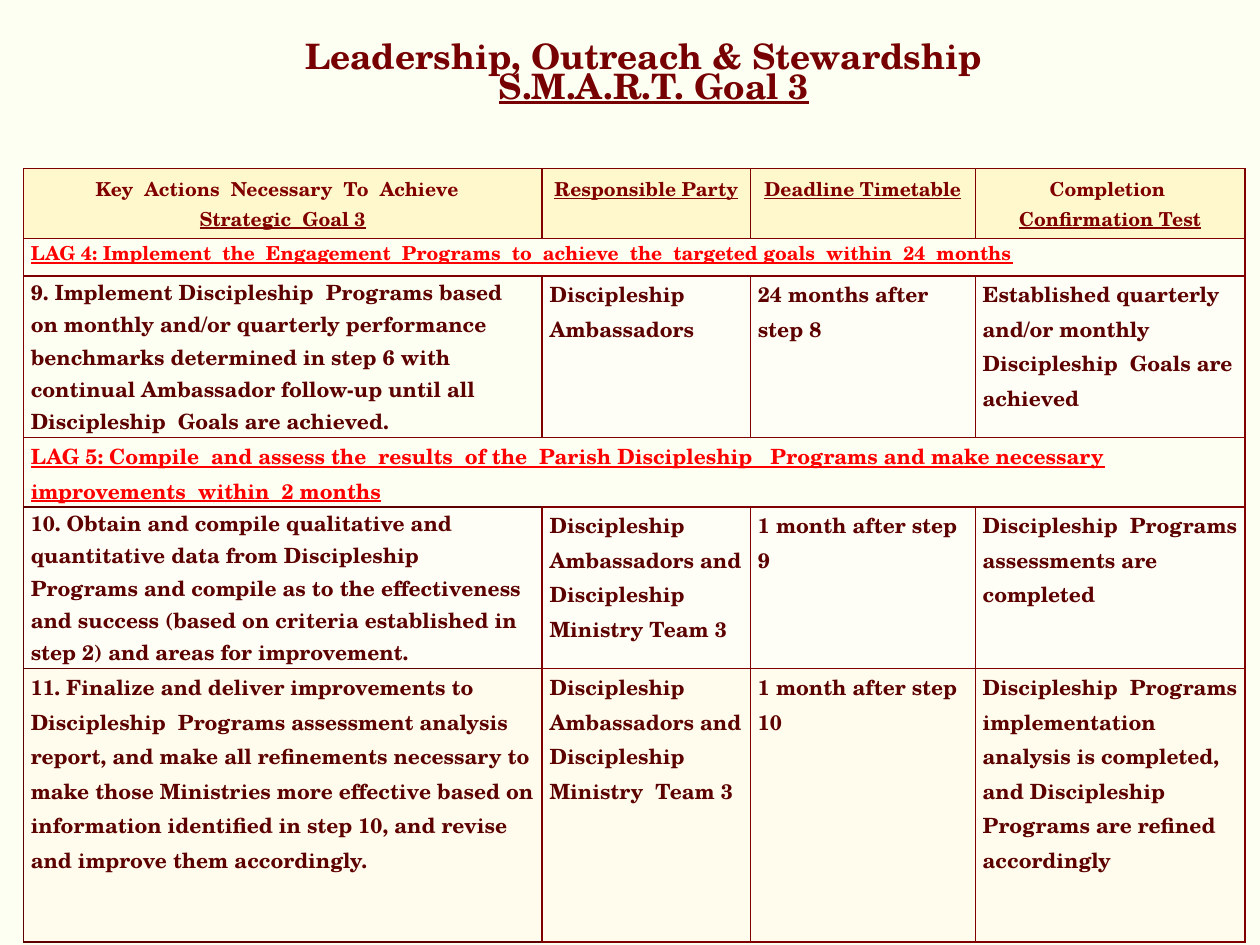
from lxml import etree
from pptx import Presentation
from pptx.dml.color import RGBColor
from pptx.enum.text import MSO_ANCHOR, MSO_AUTO_SIZE, PP_ALIGN
from pptx.oxml.ns import qn
from pptx.util import Cm, Pt

CENTER, LEFT = PP_ALIGN.CENTER, PP_ALIGN.LEFT
MIDDLE, TOP = MSO_ANCHOR.MIDDLE, MSO_ANCHOR.TOP
FONT = "TeX Gyre Schola"
MAROON, DARK, RED = "800000", "5D0100", "FF0000"
HEADER_FILL, PALE, CREAM = "FFF8CD", "FFFEF6", "FFFCED"

# Content: a cell is a list of lines; a row with one cell spans the table
TITLE = ["Leadership, Outreach & Stewardship", "S.M.A.R.T. Goal 3"]
HEADER = [
    ["Key  Actions  Necessary  To  Achieve  ", "Strategic  Goal 3"],
    ["Responsible Party"],
    ["Deadline Timetable"],
    ["Completion ", "Confirmation Test"],
]
LAG_4 = [["LAG 4: Implement  the  Engagement  Programs  to  achieve  the  targeted goals  within  24  months"]]
STEP_9 = [
    ["9. Implement Discipleship  Programs based on monthly and/or quarterly performance "
     "benchmarks determined in step 6 with continual Ambassador follow-up until all "
     "Discipleship  Goals are achieved."],
    ["Discipleship  Ambassadors"],
    ["24 months after step 8"],
    ["Established quarterly and/or monthly Discipleship  Goals are achieved"],
]
LAG_5 = [["LAG 5: Compile  and assess the  results  of the  Parish Discipleship   Programs "
          "and make necessary improvements  within  2 months"]]
STEP_10 = [
    ["10. Obtain and compile qualitative and quantitative data from Discipleship  Programs "
     "and compile as to the effectiveness and success (based on criteria established in "
     "step 2) and areas for improvement."],
    ["Discipleship  Ambassadors and Discipleship  Ministry Team 3"],
    ["1 month after step 9"],
    ["Discipleship  Programs", "assessments are completed"],
]
STEP_11 = [
    ["11. Finalize and deliver improvements to Discipleship  Programs assessment analysis "
     "report, and make all refinements necessary to make those Ministries more effective "
     "based on information identified in step 10, and revise and improve them accordingly."],
    ["Discipleship  Ambassadors and Discipleship  Ministry  Team 3"],
    ["1 month after step 10"],
    ["Discipleship  Programs implementation  analysis is completed, and Discipleship  "
     "Programs are refined accordingly"],
]

# Rows: cells, height in cm, size, colour, fills and spacings (first cell, others), first border
ROWS = [
    (HEADER, 1.32, 11, MAROON, (HEADER_FILL, HEADER_FILL), (1, 1), MAROON),
    (LAG_4, 0.76, 11, RED, (None, None), (1, 1), MAROON),
    (STEP_9, 3.1, 12, DARK, (None, PALE), (1, 1.07), MAROON),
    (LAG_5, 1.35, 12, RED, (None, None), (1.07, 1.07), MAROON),
    (STEP_10, 3.05, 12, DARK, (PALE, PALE), (1, 1.07), DARK),
    (STEP_11, 5.51, 12, DARK, (CREAM, CREAM), (1.07, 1.07), DARK),
]
COLUMN_WIDTHS = [10.46, 4.2, 4.53, 5.44]


def rgb(value):
    return RGBColor.from_string(value)


def write(frame, lines, size, colour, align, spacing, underlined):
    """Write one paragraph a line; underlined holds one flag for each line."""
    for i, (line, underline) in enumerate(zip(lines, underlined)):
        paragraph = frame.paragraphs[0] if i == 0 else frame.add_paragraph()
        layout = {"alignment": align, "line_spacing": spacing,
                  "space_before": Pt(0), "space_after": Pt(0)}
        for name, value in layout.items():
            setattr(paragraph, name, value)
        run = paragraph.add_run()
        run.text = line
        style = {"name": FONT, "size": Pt(size), "bold": True, "underline": underline}
        for name, value in style.items():
            setattr(run.font, name, value)
        run.font.color.rgb = rgb(colour)


def set_margins(target, side, edge):
    margins = {"margin_left": side, "margin_right": side,
               "margin_top": edge, "margin_bottom": edge}
    for name, value in margins.items():
        setattr(target, name, Cm(value))


def set_borders(cell, colour):
    properties = cell._tc.get_or_add_tcPr()
    for i, tag in enumerate(("a:lnL", "a:lnR", "a:lnT", "a:lnB")):
        line = etree.Element(qn(tag), w=str(Pt(1)))
        fill = etree.SubElement(line, qn("a:solidFill"))
        etree.SubElement(fill, qn("a:srgbClr"), val=colour)
        properties.insert(i, line)


# Slide and background
deck = Presentation()
deck.slide_width, deck.slide_height = Cm(25.4), Cm(19.05)
slide = deck.slides.add_slide(deck.slide_layouts[5])
slide.background.fill.solid()
slide.background.fill.fore_color.rgb = rgb("FEFFF3")

# Title
title = slide.shapes.title
title.left, title.top, title.width, title.height = Cm(2.41), Cm(0.33), Cm(21.13), Cm(2.39)
title_frame = title.text_frame
title_frame.auto_size = MSO_AUTO_SIZE.NONE
title_frame.word_wrap = True
title_frame.vertical_anchor = MIDDLE
set_margins(title_frame, 0.18, 0.1)
write(title_frame, TITLE, 20, "760002", CENTER, 0.7, [False, True])
# The second line sits slightly right of centre
title_frame.paragraphs[1]._p.get_or_add_pPr().set("marL", str(Cm(0.42)))

# Table
action_plan = slide.shapes.add_table(
    len(ROWS), len(COLUMN_WIDTHS), Cm(0.47), Cm(3.4),
    Cm(sum(COLUMN_WIDTHS)), Cm(sum(row[1] for row in ROWS))).table
action_plan.first_row = action_plan.horz_banding = False
for column, width in zip(action_plan.columns, COLUMN_WIDTHS):
    column.width = Cm(width)

for r, (cells, height, size, colour, fills, spacings, first_border) in enumerate(ROWS):
    action_plan.rows[r].height = Cm(height)
    is_header, is_goal = cells is HEADER, len(cells) == 1
    if is_goal:
        action_plan.cell(r, 0).merge(action_plan.cell(r, len(COLUMN_WIDTHS) - 1))
    for c in range(len(COLUMN_WIDTHS)):
        cell = action_plan.cell(r, c)
        rest = min(c, 1)
        if fills[rest]:
            cell.fill.solid()
            cell.fill.fore_color.rgb = rgb(fills[rest])
        else:
            cell.fill.background()
        set_borders(cell, MAROON if c else first_border)
        cell.vertical_anchor = TOP
        set_margins(cell, *((0.18, 0.1) if is_header else (0.15, 0)))
        if c < len(cells):
            lines = cells[c]
            # Headings underline their last line, goals every line
            underlined = [is_goal or (is_header and line == lines[-1]) for line in lines]
            write(cell.text_frame, lines, size, colour,
                  CENTER if is_header else LEFT, spacings[rest], underlined)

deck.save("out.pptx")
